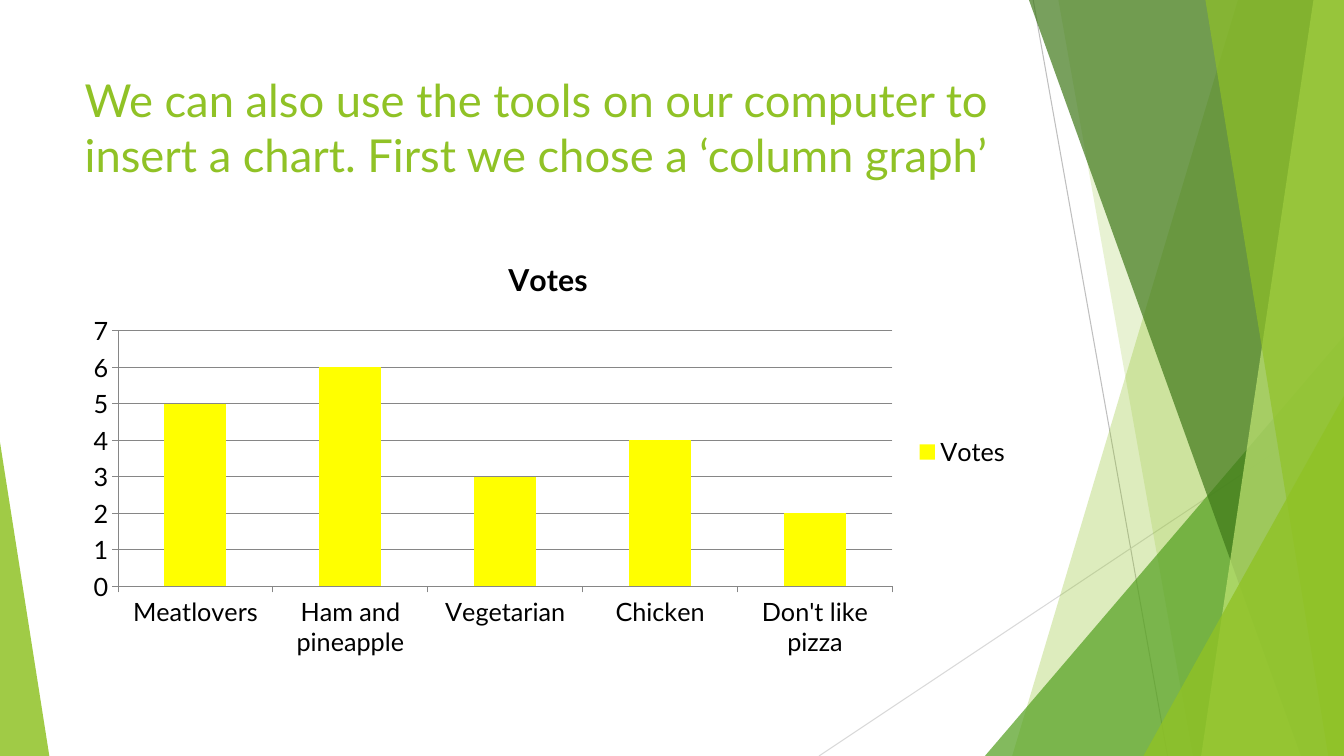
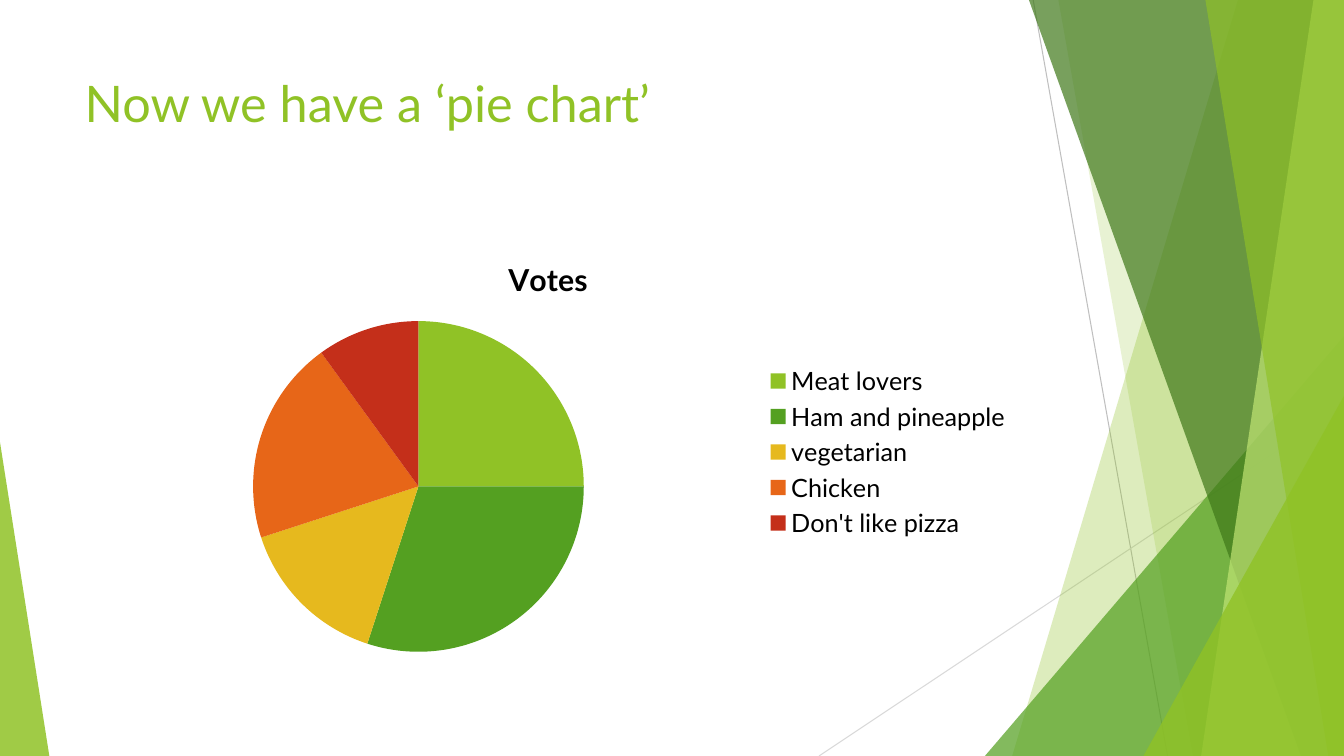
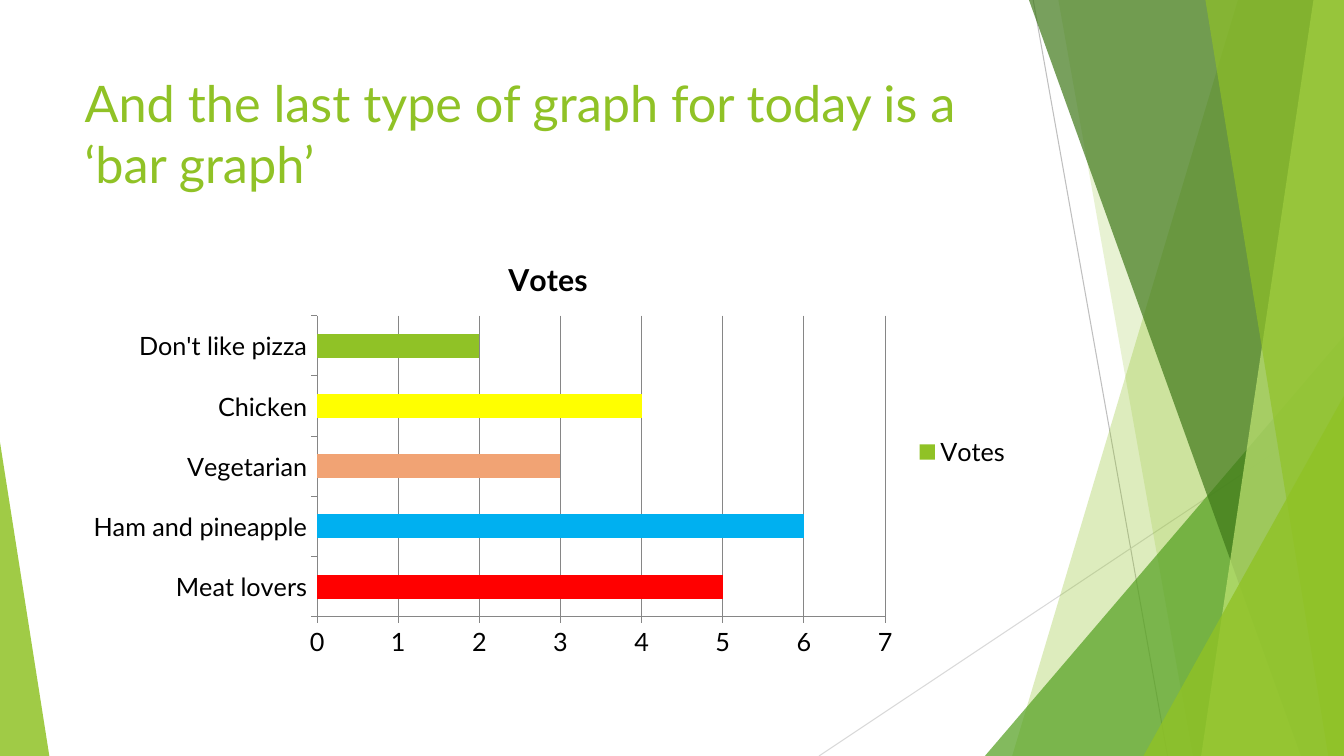
from dataclasses import dataclass, field

from lxml.etree import SubElement
from pptx import Presentation
from pptx.chart.axis import CategoryAxis, ValueAxis
from pptx.chart.data import CategoryChartData
from pptx.dml.color import RGBColor
from pptx.dml.fill import FillFormat
from pptx.enum.chart import XL_CHART_TYPE, XL_LEGEND_POSITION, XL_TICK_MARK
from pptx.enum.shapes import MSO_CONNECTOR, MSO_SHAPE
from pptx.enum.text import MSO_ANCHOR, MSO_AUTO_SIZE, PP_ALIGN
from pptx.oxml.ns import qn
from pptx.shapes.autoshape import Shape
from pptx.slide import Slide, SlideLayout
from pptx.text.text import TextFrame
from pptx.util import Emu, Pt

EMU_PER_PX = 9525
SLIDE_W, SLIDE_H = 1280, 720
TITLE_ONLY_LAYOUT = 5
FIRST_DECORATION_ID = 101


@dataclass(frozen=True)
class Theme:
    font: str = "Lato"
    lime: str = "90C226"
    green: str = "54A021"
    forest: str = "3F7819"
    pale_lime: str = "C0E474"
    gold: str = "E6B91E"
    orange: str = "E76618"
    brick: str = "C42F1A"
    yellow: str = "FFFF00"
    red: str = "FF0000"
    sky: str = "00B0F0"
    peach: str = "F1A374"
    text: str = "000000"
    axis: str = "868686"
    dark_ray: str = "BFBFBF"
    light_ray: str = "D9D9D9"
    title_size: float = 36
    long_title_size: float = 32.4
    chart_title_size: float = 21.6
    chart_size: float = 18
    hairline: float = 0.75


THEME = Theme()


@dataclass(frozen=True)
class Box:
    left: int
    top: int
    width: int
    height: int

    def emu(self) -> tuple[Emu, Emu, Emu, Emu]:
        return px(self.left), px(self.top), px(self.width), px(self.height)


@dataclass(frozen=True)
class Ray:
    start: tuple[int, int]
    end: tuple[int, int]
    color: str


@dataclass(frozen=True)
class Blade:
    """Band from a slanted left edge to the right edge of the slide."""
    top_x: int
    bottom_x: int
    color: str
    opacity: int


@dataclass(frozen=True)
class Corner:
    """Triangle standing on the bottom edge, its tip at the given share of its width."""
    left: int
    top: int
    width: int
    tip: float
    color: str
    opacity: int


@dataclass(frozen=True)
class VoteSlide:
    title: str
    kind: XL_CHART_TYPE
    categories: tuple[str, ...]
    votes: tuple[int, ...]
    series_color: str
    point_colors: tuple[str, ...] = field(default=())
    title_size: float = THEME.title_size
    title_height: int = 138


RAYS = (
    Ray((984, 0), (1112, SLIDE_H), THEME.dark_ray),
    Ray((SLIDE_W, 387), (780, SLIDE_H), THEME.light_ray),
)
PANES = (
    Blade(1179, 964, THEME.lime, 30),
    Blade(1008, 1136, THEME.lime, 20),
    Corner(938, 320, 342, 1, THEME.green, 72),
    Blade(980, 1239, THEME.forest, 70),
    Blade(1251, 1144, THEME.pale_lime, 70),
    Blade(1148, 1265, THEME.lime, 65),
    Corner(1089, 377, 191, 1, THEME.lime, 80),
    Corner(0, 421, 47, 0, THEME.lime, 85),
)
CONTENT_LEFT, CONTENT_WIDTH = 71, 902
TITLE_TOP = 64
CHART_BOX = Box(CONTENT_LEFT, 227, CONTENT_WIDTH, 407)

VOTE_SLIDES = (
    VoteSlide(
        "We can also use the tools on our computer to insert a chart. "
        "First we chose a ‘column graph’",
        XL_CHART_TYPE.COLUMN_CLUSTERED,
        ("Meatlovers", "Ham and pineapple", "Vegetarian", "Chicken", "Don't like pizza"),
        (5, 6, 3, 4, 2),
        THEME.yellow,
        title_size=THEME.long_title_size,
        title_height=156,
    ),
    VoteSlide(
        "Now we have a ‘pie chart’",
        XL_CHART_TYPE.PIE,
        ("Meat lovers", "Ham and pineapple", "vegetarian", "Chicken", "Don't like pizza"),
        (25, 30, 15, 20, 10),
        THEME.lime,
        (THEME.lime, THEME.green, THEME.gold, THEME.orange, THEME.brick),
    ),
    VoteSlide(
        "And the last type of graph for today is a ‘bar graph’",
        XL_CHART_TYPE.BAR_CLUSTERED,
        ("Meat lovers", "Ham and pineapple", "Vegetarian", "Chicken", "Don't like pizza"),
        (5, 6, 3, 4, 2),
        THEME.lime,
        (THEME.red, THEME.sky, THEME.peach, THEME.yellow),
    ),
)


def px(length: int) -> Emu:
    return Emu(length * EMU_PER_PX)


def rgb(color: str) -> RGBColor:
    return RGBColor.from_string(color)


def fill_solid(fill: FillFormat, color: str) -> None:
    fill.solid()
    fill.fore_color.rgb = rgb(color)


def write_text(frame: TextFrame, text: str, *, size: float, color: str,
               bold: bool = False, align: PP_ALIGN = PP_ALIGN.LEFT) -> None:
    paragraph = frame.paragraphs[0]
    paragraph.alignment = align
    run = paragraph.add_run()
    run.text = text
    run.font.name = THEME.font
    run.font.size = Pt(size)
    run.font.bold = bold
    run.font.color.rgb = rgb(color)


def draw_ray(slide: Slide, ray: Ray) -> None:
    connector = slide.shapes.add_connector(
        MSO_CONNECTOR.STRAIGHT, *map(px, ray.start + ray.end))
    connector.line.color.rgb = rgb(ray.color)
    connector.line.width = Pt(THEME.hairline)
    SubElement(connector.element.spPr, qn("a:effectLst"))


def blade_shape(slide: Slide, blade: Blade) -> Shape:
    outline = slide.shapes.build_freeform(blade.top_x, 0, scale=EMU_PER_PX)
    outline.add_line_segments(
        [(SLIDE_W, 0), (SLIDE_W, SLIDE_H), (blade.bottom_x, SLIDE_H)], close=True)
    return outline.convert_to_shape()


def corner_shape(slide: Slide, corner: Corner) -> Shape:
    box = Box(corner.left, corner.top, corner.width, SLIDE_H - corner.top)
    triangle = slide.shapes.add_shape(MSO_SHAPE.ISOSCELES_TRIANGLE, *box.emu())
    triangle.adjustments[0] = corner.tip
    return triangle


def draw_pane(slide: Slide, pane: Blade | Corner) -> None:
    shape = blade_shape(slide, pane) if isinstance(pane, Blade) else corner_shape(slide, pane)
    shape.shadow.inherit = False
    shape.line.fill.background()
    fill_solid(shape.fill, pane.color)
    color = shape.element.spPr.find(f"{qn('a:solidFill')}/{qn('a:srgbClr')}")
    SubElement(color, qn("a:alpha")).set("val", str(pane.opacity * 1000))


def decorate_layout(layout: SlideLayout, slide: Slide) -> None:
    """Draw the rays and panes on the slide, then move them to its layout."""
    for ray in RAYS:
        draw_ray(slide, ray)
    for pane in PANES:
        draw_pane(slide, pane)
    decorations = [shape for shape in slide.shapes if not shape.is_placeholder]
    for shape_id, decoration in enumerate(decorations, FIRST_DECORATION_ID):
        decoration.element.xpath(".//p:cNvPr")[0].set("id", str(shape_id))
        layout.shapes.element.append(decoration.element)


def add_title(slide: Slide, votes: VoteSlide) -> None:
    title = slide.shapes.title
    box = Box(CONTENT_LEFT, TITLE_TOP, CONTENT_WIDTH, votes.title_height)
    title.left, title.top, title.width, title.height = box.emu()
    frame = title.text_frame
    frame.word_wrap = True
    frame.auto_size = MSO_AUTO_SIZE.NONE
    frame.vertical_anchor = MSO_ANCHOR.TOP
    write_text(frame, votes.title, size=votes.title_size, color=THEME.lime)


def style_axis(axis: CategoryAxis | ValueAxis) -> None:
    axis.major_tick_mark = XL_TICK_MARK.OUTSIDE
    axis.minor_tick_mark = XL_TICK_MARK.NONE
    axis.format.line.color.rgb = rgb(THEME.axis)
    axis.format.line.width = Pt(THEME.hairline)


def add_chart(slide: Slide, votes: VoteSlide) -> None:
    data = CategoryChartData()
    data.categories = votes.categories
    data.add_series("Votes", votes.votes)
    chart = slide.shapes.add_chart(votes.kind, *CHART_BOX.emu(), data).chart

    chart.font.name = THEME.font
    chart.font.size = Pt(THEME.chart_size)
    chart.font.color.rgb = rgb(THEME.text)
    chart.has_title = True
    write_text(chart.chart_title.text_frame, "Votes", size=THEME.chart_title_size,
               color=THEME.text, bold=True, align=PP_ALIGN.CENTER)
    chart.chart_title.include_in_layout = False
    chart.has_legend = True
    chart.legend.position = XL_LEGEND_POSITION.RIGHT
    chart.legend.include_in_layout = False

    is_pie = votes.kind == XL_CHART_TYPE.PIE
    plot = chart.plots[0]
    plot.vary_by_categories = is_pie
    series = plot.series[0]
    fill_solid(series.format.fill, votes.series_color)
    for index, color in enumerate(votes.point_colors):
        fill_solid(series.points[index].format.fill, color)

    if not is_pie:
        plot.gap_width = 150
        style_axis(chart.category_axis)
        value_axis = chart.value_axis
        style_axis(value_axis)
        value_axis.minimum_scale, value_axis.maximum_scale = 0, 7
        value_axis.major_unit = 1
        value_axis.has_major_gridlines = True
        grid = value_axis.major_gridlines.format.line
        grid.color.rgb = rgb(THEME.axis)
        grid.width = Pt(THEME.hairline)


def main() -> None:
    deck = Presentation()
    deck.slide_width, deck.slide_height = px(SLIDE_W), px(SLIDE_H)
    layout = deck.slide_layouts[TITLE_ONLY_LAYOUT]
    slides = [deck.slides.add_slide(layout) for _ in VOTE_SLIDES]
    decorate_layout(layout, slides[0])
    for slide, votes in zip(slides, VOTE_SLIDES):
        add_title(slide, votes)
        add_chart(slide, votes)
    deck.save("out.pptx")


if __name__ == "__main__":
    main()
